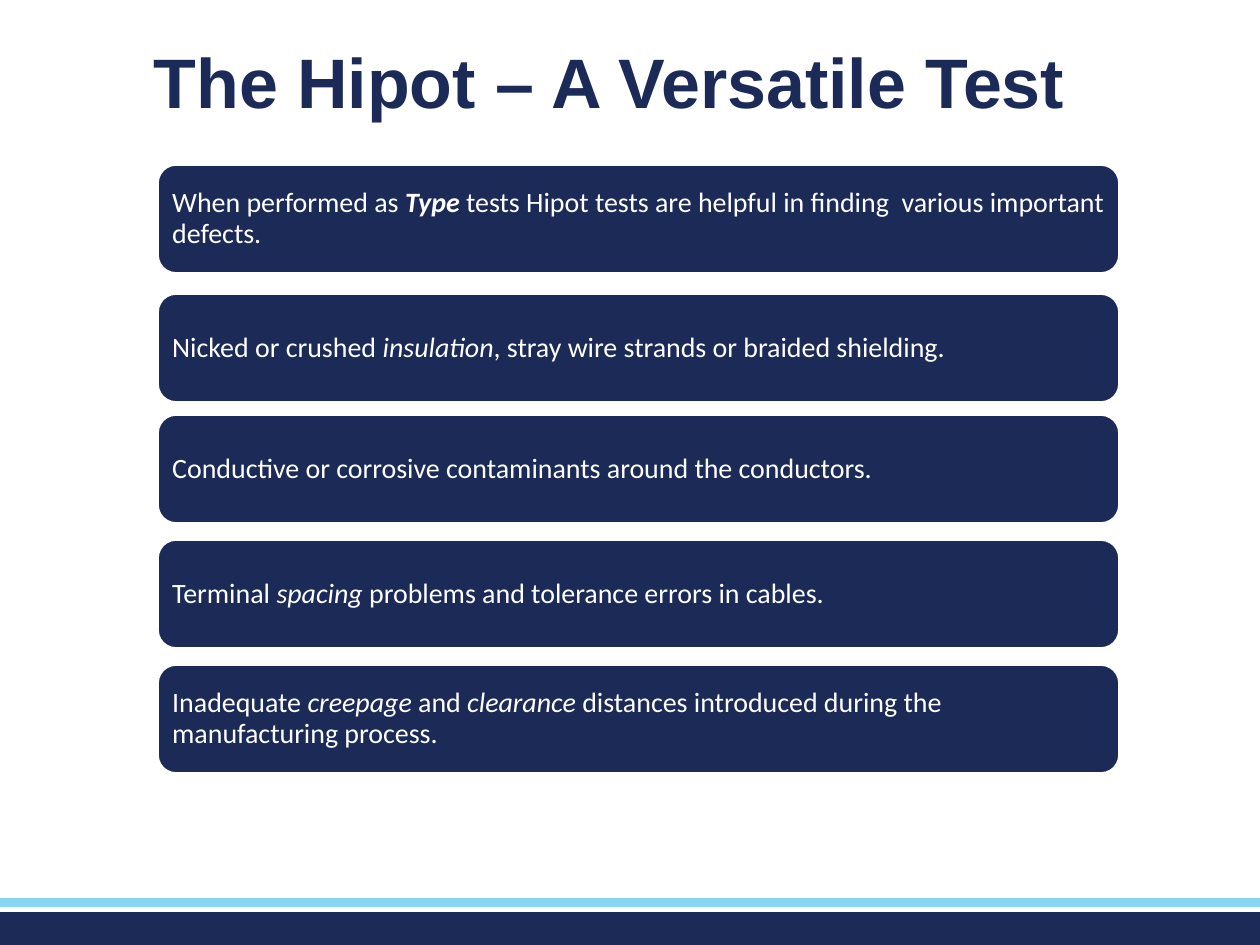
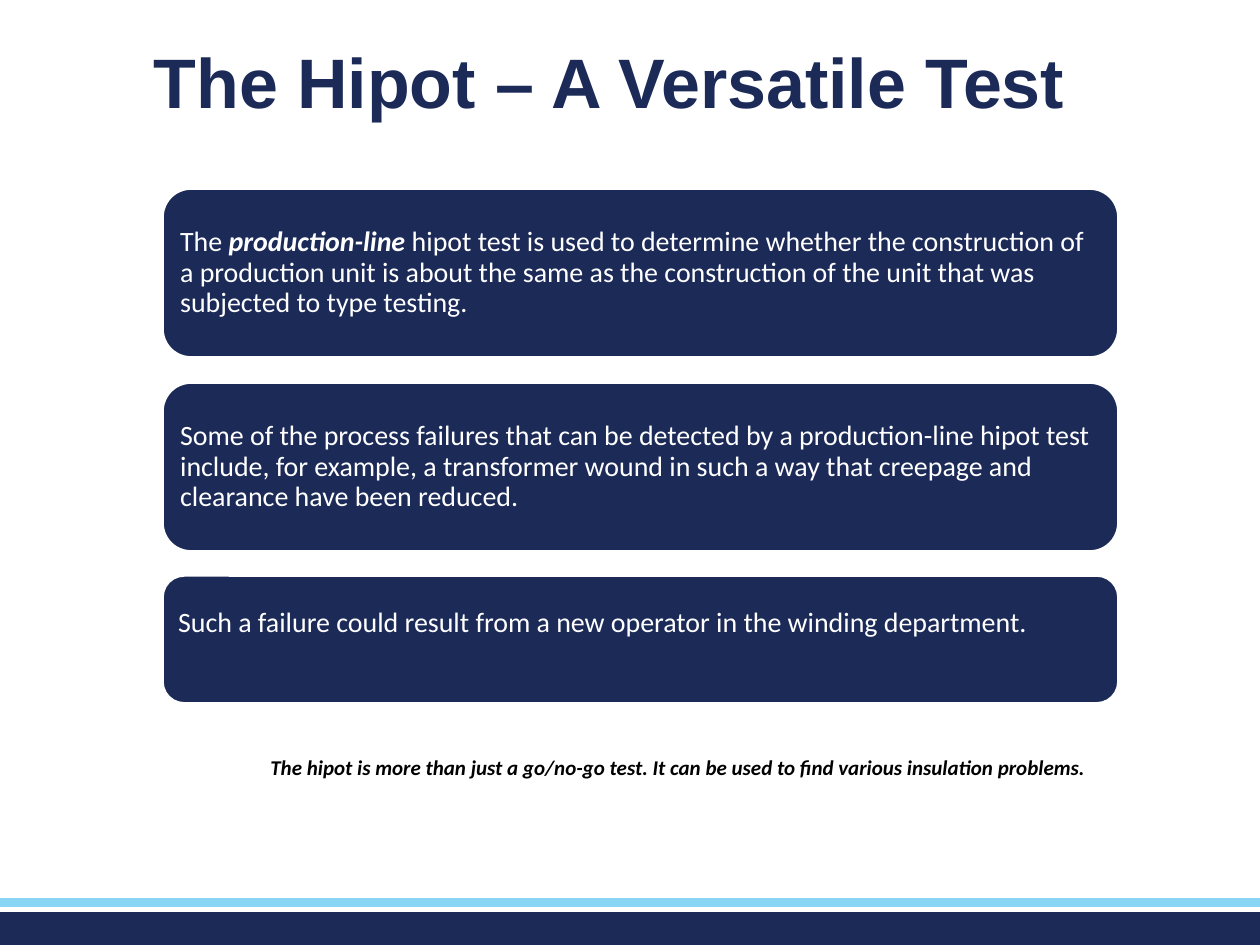
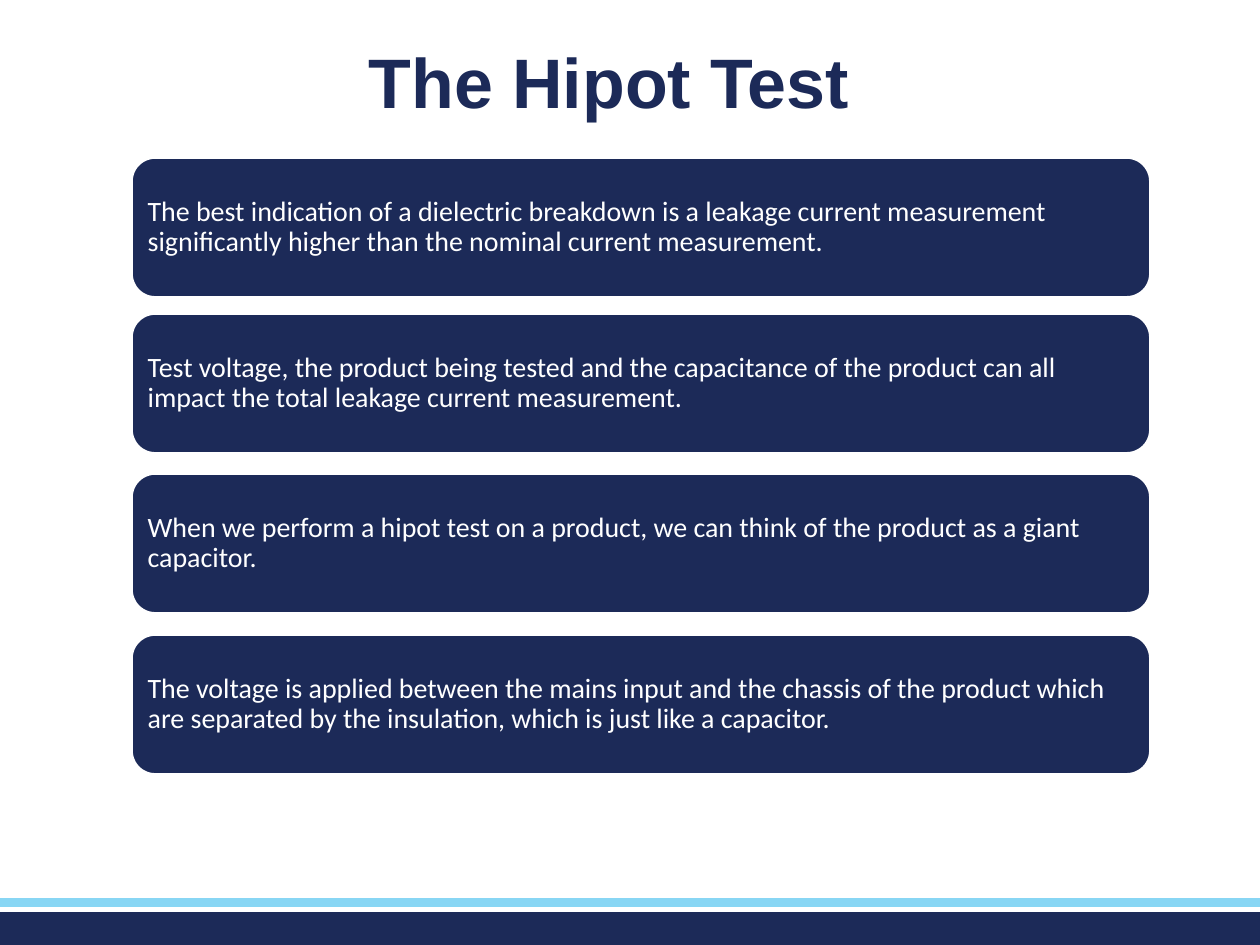
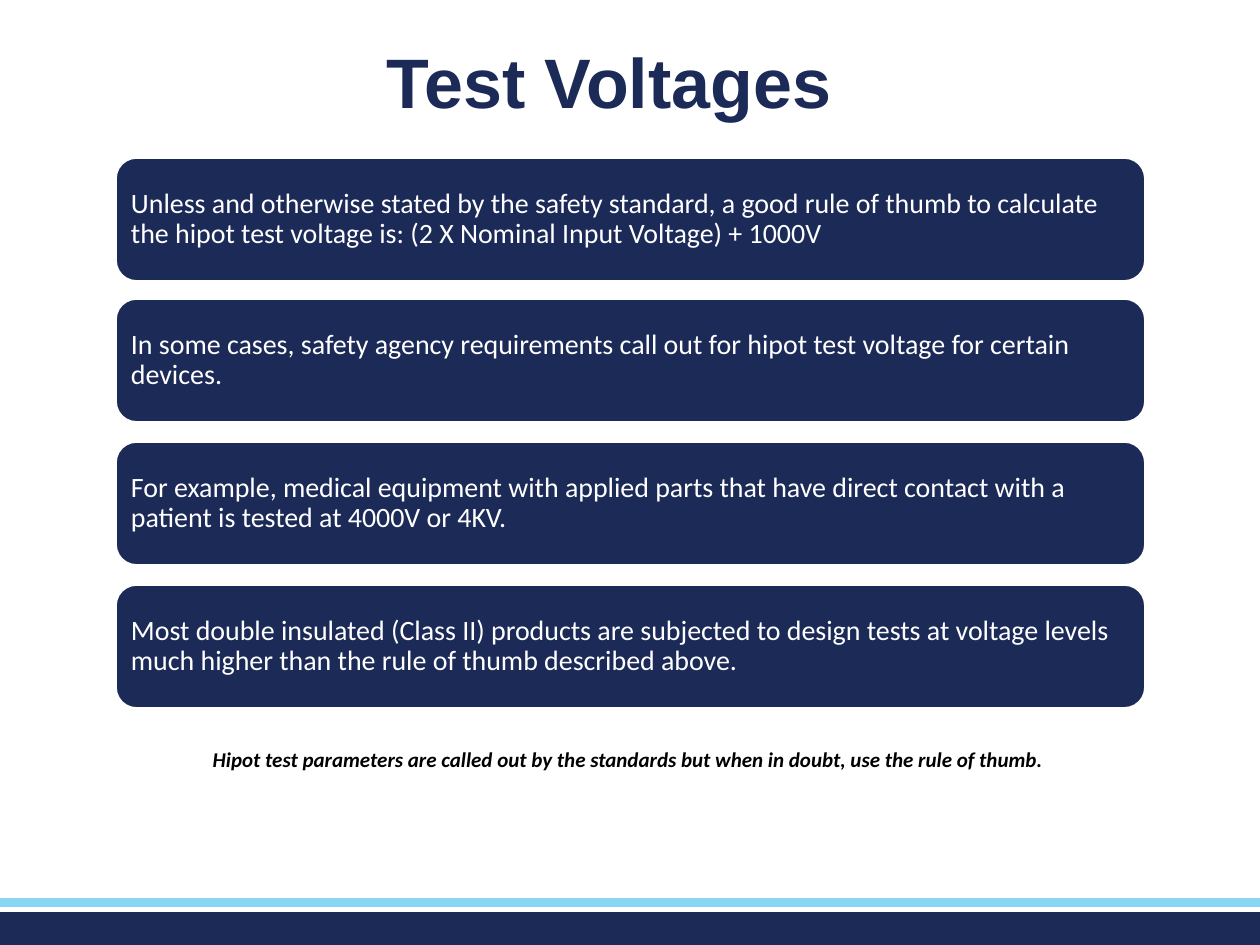
from pptx import Presentation
from pptx.dml.color import RGBColor
from pptx.enum.shapes import MSO_SHAPE as Preset
from pptx.enum.text import MSO_ANCHOR as Anchor, MSO_AUTO_SIZE as AutoSize, PP_ALIGN as Align
from pptx.util import Emu, Pt

NAVY, SKY, WHITE, BLACK = "1C2A58", "88D6F4", "FFFFFF", "000000"
PX_PER_INCH = 126
INSET = 9
TITLE_PLACE = (42, 42, 1134, 83)
BANDS = [((0, 912, 1260, 33), NAVY), ((0, 898, 1260, 9), SKY)]

SLIDES = [
    {
        "title": "The Hipot – A Versatile Test",
        "left": 158, "width": 961,
        "tops": [165, 294, 415, 540, 665], "heights": [108] * 5,
        "cards": [
            [("When performed as ", ""), ("Type", "bi"),
             (" tests Hipot tests are helpful in finding  various important defects.", "")],
            [("Nicked or crushed ", ""), ("insulation", "i"),
             (", stray wire strands or braided shielding.", "")],
            [("Conductive or corrosive contaminants around the conductors.", "")],
            [("Terminal ", ""), ("spacing", "i"),
             (" problems and tolerance errors in cables.", "")],
            [("Inadequate ", ""), ("creepage", "i"), (" and ", ""), ("clearance", "i"),
             (" distances introduced during the manufacturing process.", "")],
        ],
    },
    {
        "title": "The Hipot – A Versatile Test",
        "left": 163, "width": 955,
        "tops": [189, 383, 576], "heights": [168, 168, 127],
        "cards": [
            [("The ", ""), ("production-line ", "bi"),
             ("hipot test is used to determine whether the construction of a production unit "
              "is about the same as the construction of the unit that was subjected to type "
              "testing.", "")],
            [("Some of the process failures that can be detected by a production-line hipot test "
              "include, for example, a transformer wound in such a way that creepage and "
              "clearance have been reduced.", "")],
            [("Such a failure could result from a new operator in the winding department.", "")],
        ],
        "last_bottom_inset": 40,
        "note": "The hipot is more than just a go/no-go test. "
                "It can be used to find various insulation problems. ",
        "note_place": (166, 748, 1029, 38),
    },
    {
        "title": "The Hipot Test",
        "left": 132, "width": 1018,
        "tops": [158, 314, 474, 635], "heights": [139] * 4,
        "cards": [
            [("The best indication of a dielectric breakdown is a leakage current measurement "
              "significantly higher than the nominal current measurement.", "")],
            [("Test voltage, the product being tested and the capacitance of the product can all "
              "impact the total leakage current measurement.", "")],
            [("When we perform a hipot test on a product, we can think of the product as a giant "
              "capacitor.", "")],
            [("The voltage is applied between the mains input and the chassis of the product "
              "which are separated by the insulation, which is just like a capacitor.", "")],
        ],
    },
    {
        "title": "Test Voltages",
        "left": 116, "width": 1029,
        "tops": [158, 299, 442, 585], "heights": [123] * 4,
        "cards": [
            [("Unless and otherwise stated by the safety standard, a good rule of thumb to "
              "calculate the hipot test voltage is: (2 X Nominal Input Voltage) + 1000V", "")],
            [("In some cases, safety agency requirements call out for hipot test voltage for "
              "certain devices.", "")],
            [("For example, medical equipment with applied parts that have direct contact with "
              "a patient is tested at 4000V or 4KV.", "")],
            [("Most double insulated (Class II) products are subjected to design tests at "
              "voltage levels much higher than the rule of thumb described above.", "")],
        ],
        "note": "Hipot test parameters are called out by the standards but when in doubt, "
                "use the rule of thumb. ",
        "note_place": (116, 740, 1029, 38),
    },
]


def px(length):
    return Emu(round(length * 914400 / PX_PER_INCH))


def color(value):
    return RGBColor.from_string(value)


def style(run, size, face, tint, marks=""):
    font = run.font
    font.size, font.name = Pt(size), face
    font.bold, font.italic = "b" in marks, "i" in marks
    font.color.rgb = color(tint)


def add_block(slide, preset, place, fill):
    block = slide.shapes.add_shape(preset, *map(px, place))
    block.shadow.inherit = False
    block.fill.solid()
    block.fill.fore_color.rgb = color(fill)
    return block


def add_master_bands(prs, slide):
    tree = prs.slide_master.shapes
    for place, fill in BANDS:
        band = add_block(slide, Preset.RECTANGLE, place, fill)
        band.line.fill.background()
        band.element.nvSpPr.cNvPr.id = max(shape.shape_id for shape in tree) + 1
        tree.element.insert(2, band.element)


def set_title(slide, wording):
    title = slide.shapes.title
    title.left, title.top, title.width, title.height = map(px, TITLE_PLACE)
    frame = title.text_frame
    frame.text = wording
    frame.word_wrap = True
    frame.auto_size = AutoSize.NONE
    frame.vertical_anchor = Anchor.TOP
    heading = frame.paragraphs[0]
    heading.alignment = Align.CENTER
    heading.line_spacing = 0.9
    style(heading.runs[0], 40, "Arial", NAVY, "b")


def add_card(slide, place, pieces, bottom_inset):
    card = add_block(slide, Preset.ROUNDED_RECTANGLE, place, NAVY)
    card.line.color.rgb = color(WHITE)
    card.line.width = Pt(1)
    frame = card.text_frame
    frame.word_wrap = True
    frame.vertical_anchor = Anchor.MIDDLE
    frame.margin_left = frame.margin_right = frame.margin_top = px(INSET)
    frame.margin_bottom = px(bottom_inset)
    statement = frame.paragraphs[0]
    statement.alignment = Align.LEFT
    statement.line_spacing = 0.9
    for wording, marks in pieces:
        run = statement.add_run()
        run.text = wording
        style(run, 16, "Calibri", WHITE, marks)


def add_note(slide, place, wording):
    frame = slide.shapes.add_textbox(*map(px, place)).text_frame
    frame.word_wrap = True
    frame.auto_size = AutoSize.SHAPE_TO_FIT_TEXT
    frame.text = wording
    note = frame.paragraphs[0]
    note.alignment = Align.CENTER
    style(note.runs[0], 12, "Calibri", BLACK, "bi")


def main():
    prs = Presentation()
    prs.slide_width, prs.slide_height = px(1260), px(945)
    title_only = prs.slide_layouts[5]
    for number, content in enumerate(SLIDES):
        slide = prs.slides.add_slide(title_only)
        if number == 0:
            add_master_bands(prs, slide)
        set_title(slide, content["title"])
        insets = [INSET] * len(content["cards"])
        insets[-1] = content.get("last_bottom_inset", INSET)
        for top, height, pieces, inset in zip(
                content["tops"], content["heights"], content["cards"], insets):
            add_card(slide, (content["left"], top, content["width"], height), pieces, inset)
        if "note" in content:
            add_note(slide, content["note_place"], content["note"])
    prs.save("out.pptx")


if __name__ == "__main__":
    main()
